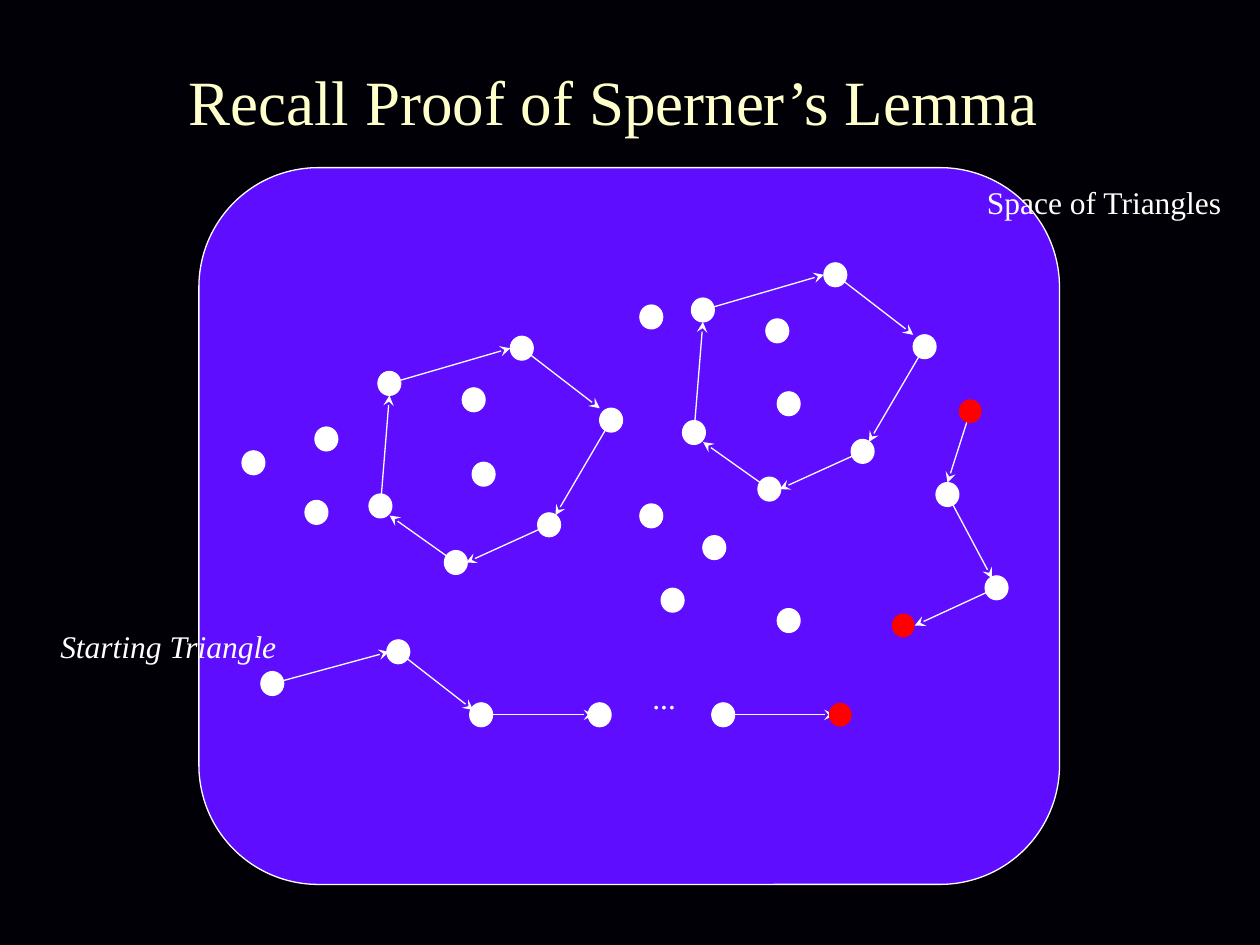
from dataclasses import dataclass
from itertools import pairwise

from pptx import Presentation
from pptx.dml.color import RGBColor
from pptx.enum.shapes import MSO_CONNECTOR, MSO_SHAPE
from pptx.enum.text import MSO_ANCHOR, PP_ALIGN
from pptx.oxml.ns import qn
from pptx.util import Cm, Pt
from lxml.etree import SubElement


@dataclass(frozen=True)
class Theme:
    background: RGBColor = RGBColor.from_string("010006")
    panel: RGBColor = RGBColor.from_string("5E0DFF")
    light: RGBColor = RGBColor.from_string("FFFFFF")
    accent: RGBColor = RGBColor.from_string("FF0000")
    title: RGBColor = RGBColor.from_string("FFFFCC")
    font: str = "Times New Roman"
    title_size: int = 36
    label_size: int = 18
    line_width: float = 0.75


THEME = Theme()
SLIDE_SIZE = (25.4, 19.05)
PANEL = (4.01, 3.38, 17.35, 14.45)
RADIUS_X, RADIUS_Y = 0.23, 0.24

TITLE = ("Recall Proof of Sperner’s Lemma", (0.2, 0.43, 24.33, 3.18))
LABELS = [
    ("Space of Triangles", (19.25, 3.56, 6.02, 1.02), False),
    ("...", (12.07, 13.54, 2.67, 1.02), True),
    ("Starting Triangle", (0.84, 12.52, 5.11, 1.02), True),
]

# Each stop: centre x, centre y, and where an arrow arrives, in node radii.
CYCLE = [
    (7.85, 7.73, (0, 1)),
    (10.52, 7.02, (-1, 0)),
    (12.32, 8.47, (-1, -1)),
    (11.07, 10.58, (0.55, -0.8)),
    (9.19, 11.34, (0.9, 0)),
    (7.67, 10.2, (0.8, 0.8)),
]
CYCLE_SHIFTS = [(0, 0), (6.32, -1.48)]
PATHS = [
    [(5.49, 13.78, (0, 0)), (8.03, 13.14, (-0.8, 0)),
     (9.7, 14.41, (-0.7, -0.4)), (12.09, 14.41, (-0.5, 0))],
    [(14.58, 14.41, (0, 0)), (16.94, 14.41, (-0.5, 0))],
    [(19.56, 8.29, (0, 0)), (19.1, 9.97, (0, -1)),
     (20.09, 11.85, (-0.4, -0.8)), (18.21, 12.61, (1, 0))],
]
LOOSE_NODES = [
    (13.13, 10.4), (13.13, 6.39), (5.11, 9.33), (6.58, 8.85),
    (6.38, 10.33), (9.55, 8.06), (9.75, 9.56), (15.67, 6.67),
    (15.9, 8.14), (14.4, 11.04), (13.56, 12.1), (15.9, 12.51),
]
RED_NODES = [(16.94, 14.41), (19.56, 8.29), (18.21, 12.61)]


def add_filled(slide, kind, box, fill, line):
    shape = slide.shapes.add_shape(kind, *map(Cm, box))
    shape.shadow.inherit = False
    shape.fill.solid()
    shape.fill.fore_color.rgb = fill
    if line is None:
        shape.line.fill.background()
    else:
        shape.line.color.rgb = line
        shape.line.width = Pt(THEME.line_width)


def add_node(slide, x, y):
    red = (x, y) in RED_NODES
    box = (x - RADIUS_X, y - RADIUS_Y, 2 * RADIUS_X, 2 * RADIUS_Y)
    add_filled(slide, MSO_SHAPE.OVAL, box,
               THEME.accent if red else THEME.light, None if red else THEME.light)


def add_arrow(slide, source, target):
    x, y, (side_x, side_y) = target
    end = (x + side_x * RADIUS_X, y + side_y * RADIUS_Y)
    connector = slide.shapes.add_connector(
        MSO_CONNECTOR.STRAIGHT, *map(Cm, (*source[:2], *end)))
    connector.line.color.rgb = THEME.light
    connector.line.width = Pt(THEME.line_width)
    SubElement(connector.line._get_or_add_ln(), qn("a:tailEnd"), type="stealth")
    SubElement(connector._element.spPr, qn("a:effectLst"))


def add_text(slide, text, box, size, color, italic=False):
    text_frame = slide.shapes.add_textbox(*map(Cm, box)).text_frame
    text_frame.word_wrap = True
    text_frame.vertical_anchor = MSO_ANCHOR.MIDDLE
    text_frame.text = text
    paragraph = text_frame.paragraphs[0]
    paragraph.alignment = PP_ALIGN.CENTER
    font = paragraph.runs[0].font
    font.name, font.size, font.italic = THEME.font, Pt(size), italic
    font.color.rgb = color


def main():
    """Build the slide on the graph argument behind Sperner's lemma."""
    presentation = Presentation()
    presentation.slide_width, presentation.slide_height = map(Cm, SLIDE_SIZE)
    slide = presentation.slides.add_slide(presentation.slide_layouts[6])
    slide.background.fill.solid()
    slide.background.fill.fore_color.rgb = THEME.background

    add_filled(slide, MSO_SHAPE.ROUNDED_RECTANGLE, PANEL, THEME.panel, THEME.light)
    cycles = [[(x + shift_x, y + shift_y, entry) for x, y, entry in CYCLE]
              for shift_x, shift_y in CYCLE_SHIFTS]
    routes = [cycle + cycle[:1] for cycle in cycles] + PATHS
    for route in routes:
        for source, target in pairwise(route):
            add_arrow(slide, source, target)
    for stops in cycles + PATHS + [LOOSE_NODES]:
        for x, y, *_ in stops:
            add_node(slide, x, y)

    for text, box, italic in LABELS:
        add_text(slide, text, box, THEME.label_size, THEME.light, italic)
    add_text(slide, *TITLE, THEME.title_size, THEME.title)
    presentation.save("out.pptx")


if __name__ == "__main__":
    main()
